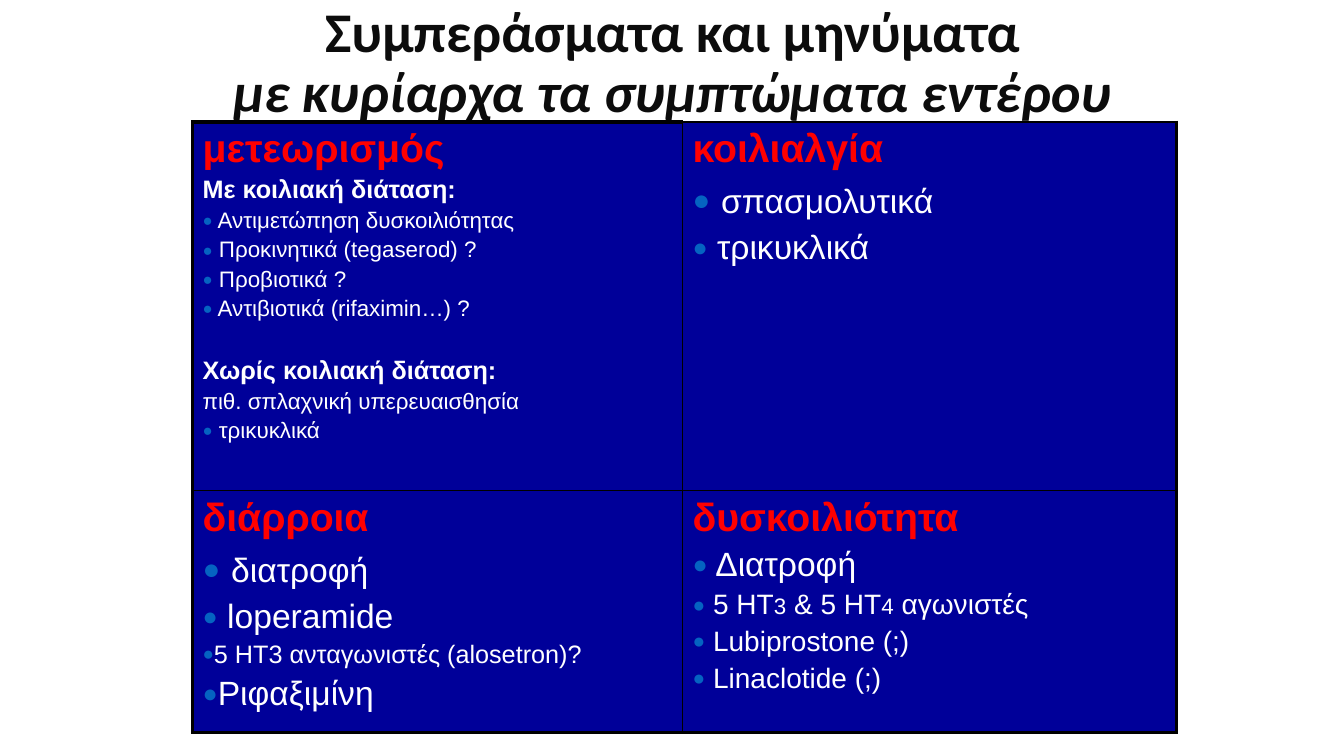
from dataclasses import dataclass

from lxml.etree import SubElement
from pptx import Presentation
from pptx.dml.color import RGBColor
from pptx.enum.text import MSO_ANCHOR, PP_ALIGN
from pptx.oxml.ns import qn
from pptx.util import Inches, Pt

NAVY = RGBColor(0x00, 0x00, 0x99)
RED = RGBColor(0xFF, 0x00, 0x00)
WHITE = RGBColor(0xFF, 0xFF, 0xFF)
INK = RGBColor(0x0C, 0x0C, 0x0C)
BULLET_BLUE = RGBColor(0x05, 0x63, 0xC1)
BLACK = RGBColor(0x00, 0x00, 0x00)

COLUMN_WIDTHS = (4.86, 4.9)
ROW_HEIGHTS = (3.66, 2.3)
OUTER_LINE, INNER_LINE, CORNER_TOP_LINE = 2.25, 1, 3
BLANK_LAYOUT = 6


@dataclass
class Line:
    """One line of a cell: (text, size) spans and how they are set."""

    spans: tuple
    bullet: bool = True
    bold: bool = False
    extra_space: float = 0


def item(text, size):
    """Return a bulleted line in one size."""
    return Line(((text, size),))


def lead_item(text, size):
    """Return a bulleted line that opens with a wide space."""
    return Line(((" ", 28), (text, size)))


def subheading(text, extra_space=0):
    """Return a bold line without a bullet."""
    return Line(((text, 18),), False, True, extra_space)


SYMPTOMS = (
    (
        ("μετεωρισμός", (
            subheading("Με κοιλιακή διάταση:"),
            item(" Αντιμετώπηση δυσκοιλιότητας", 16),
            item(" Προκινητικά (tegaserod) ?", 16),
            item(" Προβιοτικά ?", 16),
            item(" Αντιβιοτικά (rifaximin…) ?", 16),
            subheading("Χωρίς κοιλιακή διάταση:", 21.6),
            Line((("πιθ. σπλαχνική υπερευαισθησία", 16),), False),
            item(" τρικυκλικά", 16),
        )),
        ("κοιλιαλγία", (
            lead_item("σπασμολυτικά", 24),
            item(" τρικυκλικά", 24),
        )),
    ),
    (
        ("διάρροια", (
            lead_item("διατροφή", 24),
            item(" loperamide", 24),
            item("5 HT3 ανταγωνιστές (alosetron)?", 18),
            item("Ριφαξιμίνη", 24),
        )),
        ("δυσκοιλιότητα", (
            item(" Διατροφή", 24),
            Line(((" 5 ΗΤ", 20), ("3", 16), (" & 5 HT", 20), ("4", 16), (" αγωνιστές", 20))),
            item(" Lubiprostone (;)", 20),
            item(" Linaclotide (;)", 20),
        )),
    ),
)


def style_font(font, name, color, bold, size=None):
    """Set the typeface, colour, weight and optional size of a font."""
    font.name = name
    font.color.rgb = color
    font.bold = bold
    if size:
        font.size = Pt(size)


def add_bullet(para):
    """Give a paragraph a small blue round bullet."""
    properties = para._p.get_or_add_pPr()
    color = SubElement(properties, qn("a:buClr"))
    SubElement(color, qn("a:srgbClr"), val=str(BULLET_BLUE))
    SubElement(properties, qn("a:buSzPct"), val="75000")
    SubElement(properties, qn("a:buFont"), typeface="Arial")
    SubElement(properties, qn("a:buChar"), char="●")


def add_line(frame, line):
    """Append a line to a cell, spaced by a fifth of its largest size."""
    para = frame.add_paragraph()
    sizes = [size for _, size in line.spans]
    para.space_before = Pt(max(sizes) / 5 + line.extra_space)
    if line.bullet:
        add_bullet(para)
    uniform = len(set(sizes)) == 1
    style_font(para.font, "Arial", WHITE, line.bold, sizes[0] if uniform else None)
    for text, size in line.spans:
        span = para.add_run()
        span.text = text
        if not uniform:
            span.font.size = Pt(size)


def set_borders(cell, row, column):
    """Draw thick lines on the outside of the table and thin ones inside."""
    top = CORNER_TOP_LINE if column == 0 else OUTER_LINE
    widths = {
        "a:lnL": INNER_LINE if column else OUTER_LINE,
        "a:lnR": OUTER_LINE if column else INNER_LINE,
        "a:lnT": INNER_LINE if row else top,
        "a:lnB": OUTER_LINE if row else INNER_LINE,
    }
    properties = cell._tc.get_or_add_tcPr()
    for tag, width in widths.items():
        border = SubElement(properties, qn(tag), w=str(Pt(width)))
        fill = SubElement(border, qn("a:solidFill"))
        SubElement(fill, qn("a:srgbClr"), val=str(BLACK))


def fill_cell(cell, heading, lines):
    """Write a red heading and its lines on a navy cell."""
    cell.fill.solid()
    cell.fill.fore_color.rgb = NAVY
    para = cell.text_frame.paragraphs[0]
    para.text = heading
    style_font(para.font, "Arial", RED, True, 28)
    for line in lines:
        add_line(cell.text_frame, line)


def add_symptom_table(page):
    """Add the two by two table of symptoms."""
    frame = page.shapes.add_table(
        len(ROW_HEIGHTS), len(COLUMN_WIDTHS), Inches(1.91), Inches(1.21),
        Inches(sum(COLUMN_WIDTHS)), Inches(sum(ROW_HEIGHTS)),
    )
    table = frame.table
    table.first_row = False
    table.horz_banding = False
    for column, width in zip(table.columns, COLUMN_WIDTHS):
        column.width = Inches(width)
    for row, height in zip(table.rows, ROW_HEIGHTS):
        row.height = Inches(height)
    for row_index, row_symptoms in enumerate(SYMPTOMS):
        for column_index, (heading, lines) in enumerate(row_symptoms):
            cell = table.cell(row_index, column_index)
            set_borders(cell, row_index, column_index)
            fill_cell(cell, heading, lines)


def add_title(page, first, second):
    """Add the centred title, its second line in italics."""
    box = page.shapes.add_textbox(Inches(1.67), Inches(0), Inches(10), Inches(1.28))
    frame = box.text_frame
    frame.word_wrap = True
    frame.vertical_anchor = MSO_ANCHOR.MIDDLE
    para = frame.paragraphs[0]
    para.alignment = PP_ALIGN.CENTER
    para.line_spacing = 0.9
    style_font(para.font, "Calibri", INK, True, 40)
    para.add_run().text = first
    para.add_line_break()
    span = para.add_run()
    span.text = second
    span.font.italic = True


def main():
    """Build the slide and save it."""
    deck = Presentation()
    deck.slide_width = Inches(13.33)
    deck.slide_height = Inches(7.5)
    page = deck.slides.add_slide(deck.slide_layouts[BLANK_LAYOUT])
    add_title(page, "Συμπεράσματα και μηνύματα", "με κυρίαρχα τα συμπτώματα εντέρου")
    add_symptom_table(page)
    deck.save("out.pptx")


if __name__ == "__main__":
    main()
